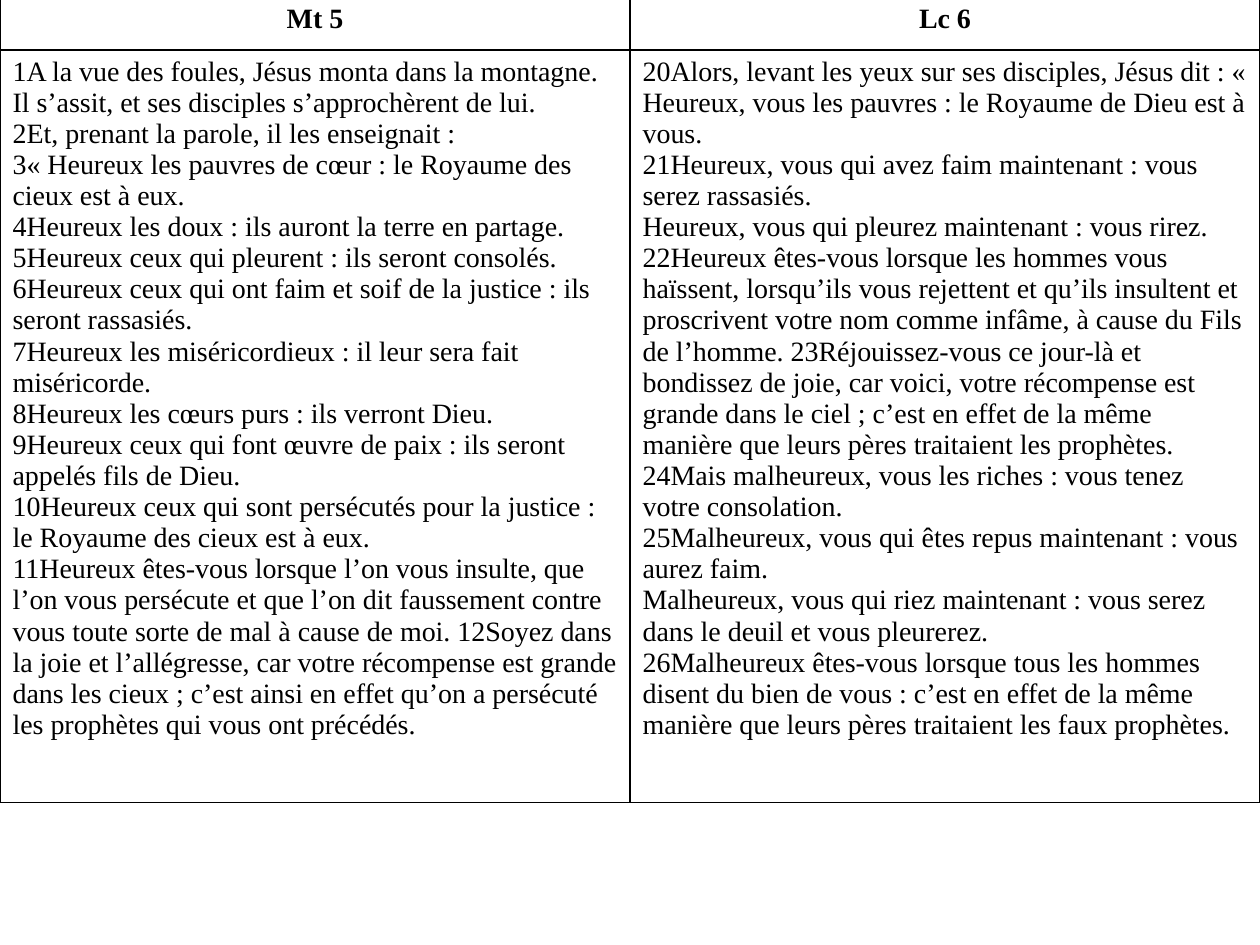
from dataclasses import dataclass

from lxml import etree
from pptx import Presentation
from pptx.dml.color import RGBColor
from pptx.enum.text import PP_ALIGN
from pptx.oxml.ns import qn
from pptx.util import Pt

CENTER, LEFT = PP_ALIGN.CENTER, PP_ALIGN.LEFT


@dataclass(frozen=True)
class Theme:
    font: str = "Times New Roman"
    size: int = 16
    ink: str = "000000"
    paper: str = "FFFFFF"
    border: int = 1


THEME = Theme()

PASSAGES = {
    "Mt 5": [
        "1A la vue des foules, Jésus monta dans la montagne. Il s’assit, et ses "
        "disciples s’approchèrent de lui.",
        "2Et, prenant la parole, il les enseignait :",
        "3« Heureux les pauvres de cœur : le Royaume des cieux est à eux.",
        "4Heureux les doux : ils auront la terre en partage.",
        "5Heureux ceux qui pleurent : ils seront consolés.",
        "6Heureux ceux qui ont faim et soif de la justice : ils seront rassasiés.",
        "7Heureux les miséricordieux : il leur sera fait miséricorde.",
        "8Heureux les cœurs purs : ils verront Dieu.",
        "9Heureux ceux qui font œuvre de paix : ils seront appelés fils de Dieu.",
        "10Heureux ceux qui sont persécutés pour la justice : le Royaume des cieux "
        "est à eux.",
        "11Heureux êtes-vous lorsque l’on vous insulte, que l’on vous persécute et "
        "que l’on dit faussement contre vous toute sorte de mal à cause de moi. "
        "12Soyez dans la joie et l’allégresse, car votre récompense est grande dans "
        "les cieux ; c’est ainsi en effet qu’on a persécuté les prophètes qui vous "
        "ont précédés.",
    ],
    "Lc 6": [
        "20Alors, levant les yeux sur ses disciples, Jésus dit : « Heureux, vous les "
        "pauvres : le Royaume de Dieu est à vous.",
        "21Heureux, vous qui avez faim maintenant : vous serez rassasiés.",
        "Heureux, vous qui pleurez maintenant : vous rirez.",
        "22Heureux êtes-vous lorsque les hommes vous haïssent, lorsqu’ils vous "
        "rejettent et qu’ils insultent et proscrivent votre nom comme infâme, à cause "
        "du Fils de l’homme. 23Réjouissez-vous ce jour-là et bondissez de joie, car "
        "voici, votre récompense est grande dans le ciel ; c’est en effet de la même "
        "manière que leurs pères traitaient les prophètes.",
        "24Mais malheureux, vous les riches : vous tenez votre consolation.",
        "25Malheureux, vous qui êtes repus maintenant : vous aurez faim.",
        "Malheureux, vous qui riez maintenant : vous serez dans le deuil et vous "
        "pleurerez.",
        "26Malheureux êtes-vous lorsque tous les hommes disent du bien de vous : c’est "
        "en effet de la même manière que leurs pères traitaient les faux prophètes.",
    ],
}


def write(cell, lines, bold=False, align=LEFT):
    """Fill a cell with one paragraph per line."""
    frame = cell.text_frame
    for index, line in enumerate(lines):
        para = frame.add_paragraph() if index else frame.paragraphs[0]
        para.alignment = align
        span = para.add_run()
        span.text = line
        span.font.name = THEME.font
        span.font.size = Pt(THEME.size)
        span.font.bold = bold
        span.font.color.rgb = RGBColor.from_string(THEME.ink)


def frame_cell(cell):
    """Draw all four borders and the plain fill of a cell."""
    properties = cell._tc.get_or_add_tcPr()
    for side in ("a:lnL", "a:lnR", "a:lnT", "a:lnB"):
        line = etree.SubElement(properties, qn(side), w=str(Pt(THEME.border)))
        fill = etree.SubElement(line, qn("a:solidFill"))
        etree.SubElement(fill, qn("a:srgbClr"), val=THEME.ink)
    cell.fill.solid()
    cell.fill.fore_color.rgb = RGBColor.from_string(THEME.paper)


deck = Presentation()
deck.slide_width, deck.slide_height = Pt(720), Pt(540)
page = deck.slides.add_slide(deck.slide_layouts[6])

row_heights = (30, 430)
table = page.shapes.add_table(
    2, len(PASSAGES), Pt(0), Pt(-1.5), deck.slide_width, Pt(sum(row_heights))
).table
table.horz_banding = False
for row, height in zip(table.rows, row_heights):
    row.height = Pt(height)

for column, (title, verses) in enumerate(PASSAGES.items()):
    write(table.cell(0, column), [title], bold=True, align=CENTER)
    write(table.cell(1, column), verses)

for cell in table.iter_cells():
    frame_cell(cell)

deck.save("out.pptx")
